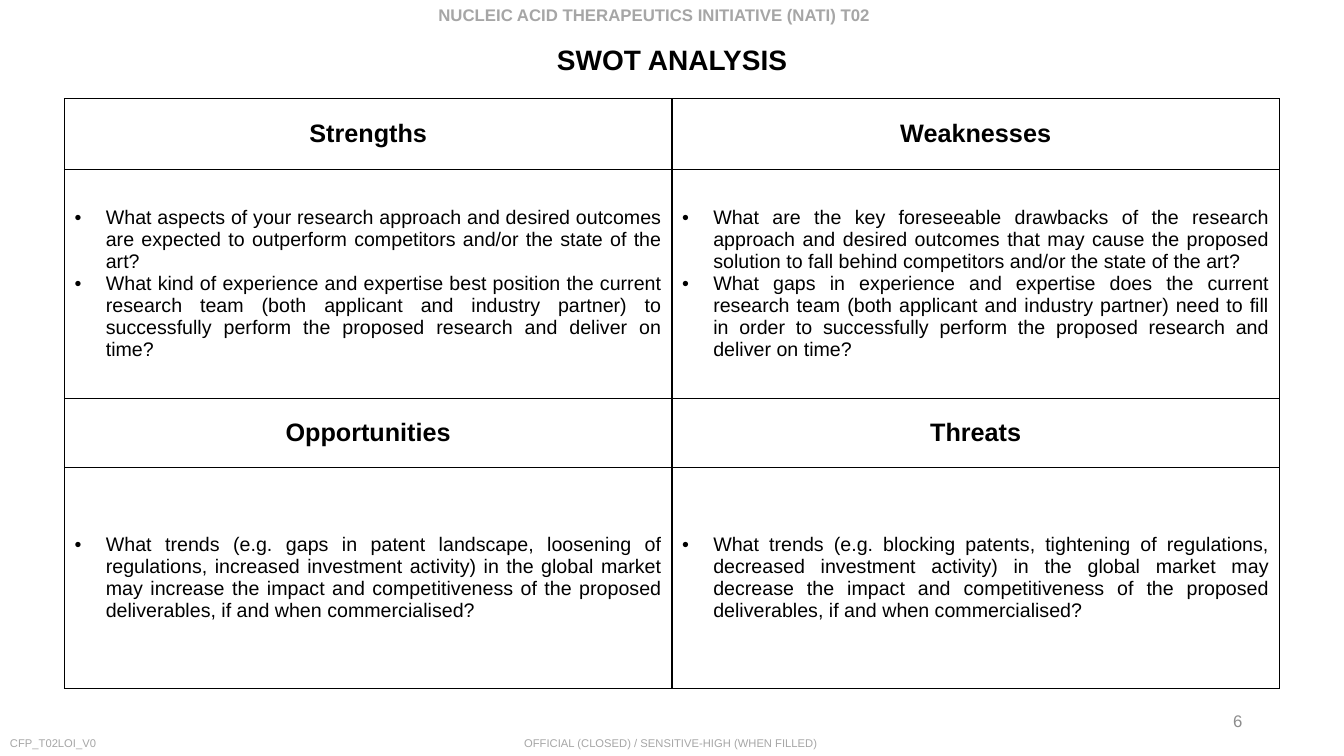
from dataclasses import dataclass

import pptx
import pptx.util
import pptx.dml.color
import pptx.enum.text
import pptx.oxml.ns
from lxml import etree

ALIGN = pptx.enum.text.PP_ALIGN
ANCHOR = pptx.enum.text.MSO_ANCHOR
BLACK, GREY, DIM = "000000", "A6A6A6", "8C8C8C"
HANG = pptx.util.Inches(0.31)

deck = pptx.Presentation()
deck.slide_width = pptx.util.Inches(13.33)
deck.slide_height = pptx.util.Inches(7.5)
slide = deck.slides.add_slide(deck.slide_layouts[6])


# Lengths are percent shares of the slide
def across(share: float) -> int:
    return round(deck.slide_width * share / 100)


def down(share: float) -> int:
    return round(deck.slide_height * share / 100)


@dataclass
class Label:
    text: str
    left: float
    top: float
    width: float
    height: float
    size: int
    color: str
    bold: bool = False
    align: int = ALIGN.LEFT
    anchor: int = ANCHOR.TOP
    wrap: bool = True


@dataclass
class Topic:
    name: str
    points: list[str]


LABELS = [
    Label("OFFICIAL (CLOSED) / SENSITIVE-HIGH (WHEN FILLED)",
          38.26, 96.8, 23.56, 3.2, 8, GREY, wrap=False),
    Label("CFP_T02LOI_V0", 0, 96.8, 50, 3.2, 8, GREY),
    Label("NUCLEIC ACID THERAPEUTICS INITIATIVE (NATI) T02",
          31.88, 0, 36.31, 4, 12, GREY, bold=True),
    Label("6", 70.67, 92.67, 22.51, 5.33, 12, DIM,
          align=ALIGN.RIGHT, anchor=ANCHOR.MIDDLE),
    Label("SWOT ANALYSIS", 7.43, 4.93, 85.15, 6.53, 20, BLACK,
          bold=True, align=ALIGN.CENTER),
]

TOPICS = [
    Topic("Strengths", [
        "What aspects of your research approach and desired outcomes are expected "
        "to outperform competitors and/or the state of the art?",
        "What kind of experience and expertise best position the current research "
        "team (both applicant and industry partner) to successfully perform the "
        "proposed research and deliver on time?",
    ]),
    Topic("Weaknesses", [
        "What are the key foreseeable drawbacks of the research approach and desired "
        "outcomes that may cause the proposed solution to fall behind competitors "
        "and/or the state of the art?",
        "What gaps in experience and expertise does the current research team (both "
        "applicant and industry partner) need to fill in order to successfully "
        "perform the proposed research and deliver on time?",
    ]),
    Topic("Opportunities", [
        "What trends (e.g. gaps in patent landscape, loosening of regulations, "
        "increased investment activity) in the global market may increase the impact "
        "and competitiveness of the proposed deliverables, if and when commercialised?",
    ]),
    Topic("Threats", [
        "What trends (e.g. blocking patents, tightening of regulations, decreased "
        "investment activity) in the global market may decrease the impact and "
        "competitiveness of the proposed deliverables, if and when commercialised?",
    ]),
]
ROWS = [9.33, 30.27, 9.2, 29.2]


def paint(code: str) -> pptx.dml.color.RGBColor:
    return pptx.dml.color.RGBColor.from_string(code)


def style(frame, size: int, color: str, bold: bool, align: int) -> None:
    for para in frame.paragraphs:
        para.alignment = align
        for run in para.runs:
            run.font.name = "Arial"
            run.font.size = pptx.util.Pt(size)
            run.font.bold = bold
            run.font.color.rgb = paint(color)


def add_tag(parent, name: str, **attrs: str):
    return etree.SubElement(parent, pptx.oxml.ns.qn(name), attrs)


def draw_label(label: Label) -> None:
    box = slide.shapes.add_textbox(across(label.left), down(label.top),
                                   across(label.width), down(label.height))
    frame = box.text_frame
    frame.word_wrap = label.wrap
    frame.vertical_anchor = label.anchor
    frame.text = label.text
    style(frame, label.size, label.color, label.bold, label.align)


def fill_cell(cell, lines: list[str], size: int, bold: bool, align: int) -> None:
    cell.text_frame.text = "\n".join(lines)
    cell.vertical_anchor = ANCHOR.MIDDLE
    style(cell.text_frame, size, BLACK, bold, align)
    props = cell._tc.get_or_add_tcPr()
    for side in ("a:lnL", "a:lnR", "a:lnT", "a:lnB"):
        line = add_tag(props, side, w=str(pptx.util.Pt(1)))
        add_tag(add_tag(line, "a:solidFill"), "a:srgbClr", val=BLACK)
    cell.fill.background()


def add_dots(cell) -> None:
    for para in cell.text_frame.paragraphs:
        props = para._p.get_or_add_pPr()
        props.set("marL", str(HANG))
        props.set("indent", str(-HANG))
        add_tag(props, "a:buFont", typeface="Arial")
        add_tag(props, "a:buChar", char="•")


def draw_grid() -> None:
    grid = slide.shapes.add_table(len(ROWS), 2, across(4.8), down(13.07),
                                  across(90.4), down(sum(ROWS))).table
    grid.first_row = grid.horz_banding = False
    for row, share in zip(grid.rows, ROWS):
        row.height = down(share)
    # Each topic takes a heading cell and the cell below it
    for i, topic in enumerate(TOPICS):
        row, col = i // 2 * 2, i % 2
        fill_cell(grid.cell(row, col), [topic.name], 18, True, ALIGN.CENTER)
        body = grid.cell(row + 1, col)
        fill_cell(body, topic.points, 14, False, ALIGN.JUSTIFY)
        add_dots(body)


# Table, then the title and page labels
draw_grid()
for label in LABELS:
    draw_label(label)

deck.save("out.pptx")
